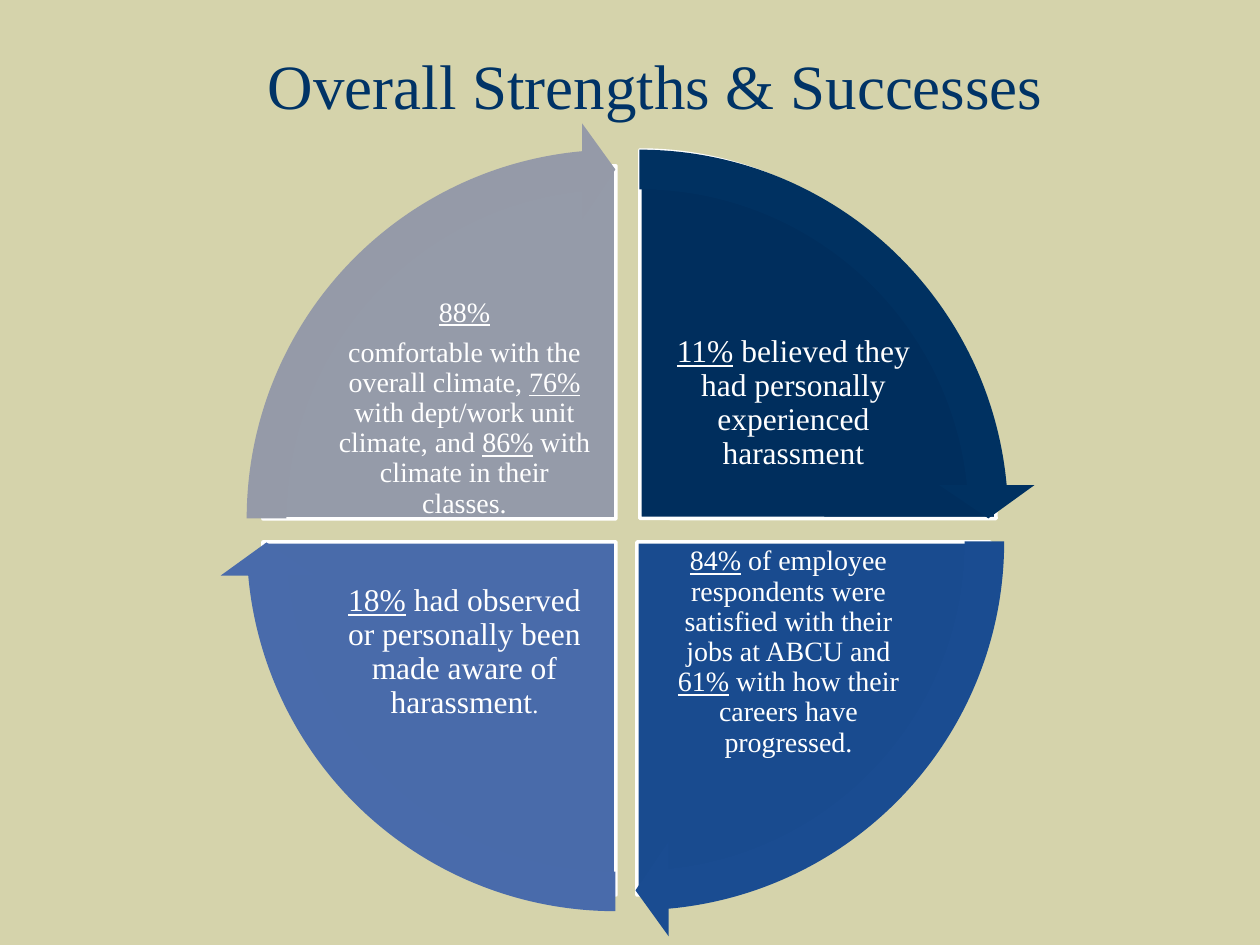
from dataclasses import dataclass

import pptx
import pptx.dml.color
import pptx.enum.shapes
import pptx.enum.text
import pptx.util

RGBColor = pptx.dml.color.RGBColor
MSO_SHAPE = pptx.enum.shapes.MSO_SHAPE

EMU_PER_PX = 914400 / 126
FONT = "Times New Roman"
SAND = RGBColor(0xD5, 0xD3, 0xAB)
TITLE_BLUE = RGBColor(0x00, 0x33, 0x66)
WHITE = RGBColor(0xFF, 0xFF, 0xFF)
FULL_TURN = 216  # 360 degrees in shape adjustment units
QUARTER = FULL_TURN / 4
ARROW_SIZE = 793
ARROW_SWEEP_END = 50.72  # where the arrow head starts, past the wedge's first edge


@dataclass(frozen=True)
class Box:
    left: int
    top: int
    width: int
    height: int

    def emu(self) -> list[int]:
        return [round(v * EMU_PER_PX) for v in (self.left, self.top, self.width, self.height)]


@dataclass(frozen=True)
class Run:
    text: str
    underline: bool = False
    size: int | None = None


@dataclass(frozen=True)
class Quadrant:
    start: float
    pie: Box
    pie_color: RGBColor
    arrow_left: int
    arrow_top: int
    arrow_color: RGBColor
    label: Box
    size: int
    inset: int
    paragraphs: list[list[Run]]


QUADRANTS = [
    Quadrant(
        3 * QUARTER, Box(284, 150, 712, 737), RGBColor(0x00, 0x2E, 0x5D),
        243, 122, RGBColor(0x00, 0x31, 0x61), Box(662, 302, 263, 202), 18, 4,
        [[Run("11%", True), Run(" believed they had personally experienced harassment")]],
    ),
    Quadrant(
        0, Box(284, 189, 706, 706), RGBColor(0x19, 0x4B, 0x8F),
        239, 145, RGBColor(0x1A, 0x4C, 0x91), Box(658, 556, 261, 193), 16, 3,
        [[Run("84%", True),
          Run(" of employee respondents were satisfied with their jobs at ABCU and "),
          Run("61%", True), Run(" with how their careers have progressed.")]],
    ),
    Quadrant(
        QUARTER, Box(263, 189, 706, 706), RGBColor(0x49, 0x6B, 0xAA),
        219, 146, RGBColor(0x49, 0x6B, 0xAB), Box(334, 556, 261, 193), 18, 4,
        [[Run("18%", True),
          Run(" had observed or personally been made aware of harassment"),
          Run(".", size=14)]],
    ),
    Quadrant(
        2 * QUARTER, Box(263, 166, 706, 706), RGBColor(0x95, 0x9B, 0xA9),
        219, 122, RGBColor(0x95, 0x9A, 0xA8), Box(334, 312, 261, 193), 16, 3,
        [[Run("88%", True)],
         [Run("comfortable with the overall climate, "), Run("76%", True),
          Run(" with dept/work unit climate, and "), Run("86%", True),
          Run(" with climate in their classes.")]],
    ),
]


def add_text(slide, box: Box, paragraphs: list[list[Run]], *, size: int, color: RGBColor,
             line_spacing: float = 0.9, space_after: float = 0, inset: int = 0) -> None:
    tf = slide.shapes.add_textbox(*box.emu()).text_frame
    tf.word_wrap = True
    tf.vertical_anchor = pptx.enum.text.MSO_ANCHOR.MIDDLE
    margin = round(inset * EMU_PER_PX)
    tf.margin_left = tf.margin_right = tf.margin_top = tf.margin_bottom = margin
    for i, runs in enumerate(paragraphs):
        p = tf.add_paragraph() if i else tf.paragraphs[0]
        p.alignment = pptx.enum.text.PP_ALIGN.CENTER
        p.line_spacing = line_spacing
        p.space_after = pptx.util.Pt(space_after)
        for run in runs:
            r = p.add_run()
            r.text = run.text
            r.font.name = FONT
            r.font.size = pptx.util.Pt(run.size or size)
            r.font.color.rgb = color
            r.font.underline = run.underline


def add_preset(slide, kind: MSO_SHAPE, box: Box, color: RGBColor,
               adjustments: list[float], outlined: bool = False) -> None:
    s = slide.shapes.add_shape(kind, *box.emu())
    s.shadow.inherit = False
    for i, value in enumerate(adjustments):
        s.adjustments[i] = value
    s.fill.solid()
    s.fill.fore_color.rgb = color
    if outlined:
        s.line.color.rgb = WHITE
        s.line.width = pptx.util.Pt(2)
    else:
        s.line.fill.background()


def add_wedge(slide, q: Quadrant) -> None:
    end = (q.start + QUARTER) % FULL_TURN
    add_preset(slide, MSO_SHAPE.PIE, q.pie, q.pie_color, [q.start, end], outlined=True)
    add_text(slide, q.label, q.paragraphs, size=q.size, color=WHITE,
             space_after=0.35 * q.size, inset=q.inset)


def add_rim_arrow(slide, q: Quadrant) -> None:
    box = Box(q.arrow_left, q.arrow_top, ARROW_SIZE, ARROW_SIZE)
    add_preset(slide, MSO_SHAPE.CIRCULAR_ARROW, box, q.arrow_color,
               [0.05, 3.28, q.start + ARROW_SWEEP_END, q.start, 0.06])


def main() -> None:
    prs = pptx.Presentation()
    prs.slide_width = round(1260 * EMU_PER_PX)
    prs.slide_height = round(945 * EMU_PER_PX)
    slide = prs.slides.add_slide(prs.slide_layouts[6])
    slide.background.fill.solid()
    slide.background.fill.fore_color.rgb = SAND

    add_text(slide, Box(147, 32, 1017, 116), [[Run("Overall Strengths & Successes")]],
             size=36, color=TITLE_BLUE, line_spacing=0.85)
    for q in QUADRANTS:
        add_wedge(slide, q)
    for q in QUADRANTS:
        add_rim_arrow(slide, q)
    prs.save("out.pptx")


if __name__ == "__main__":
    main()
